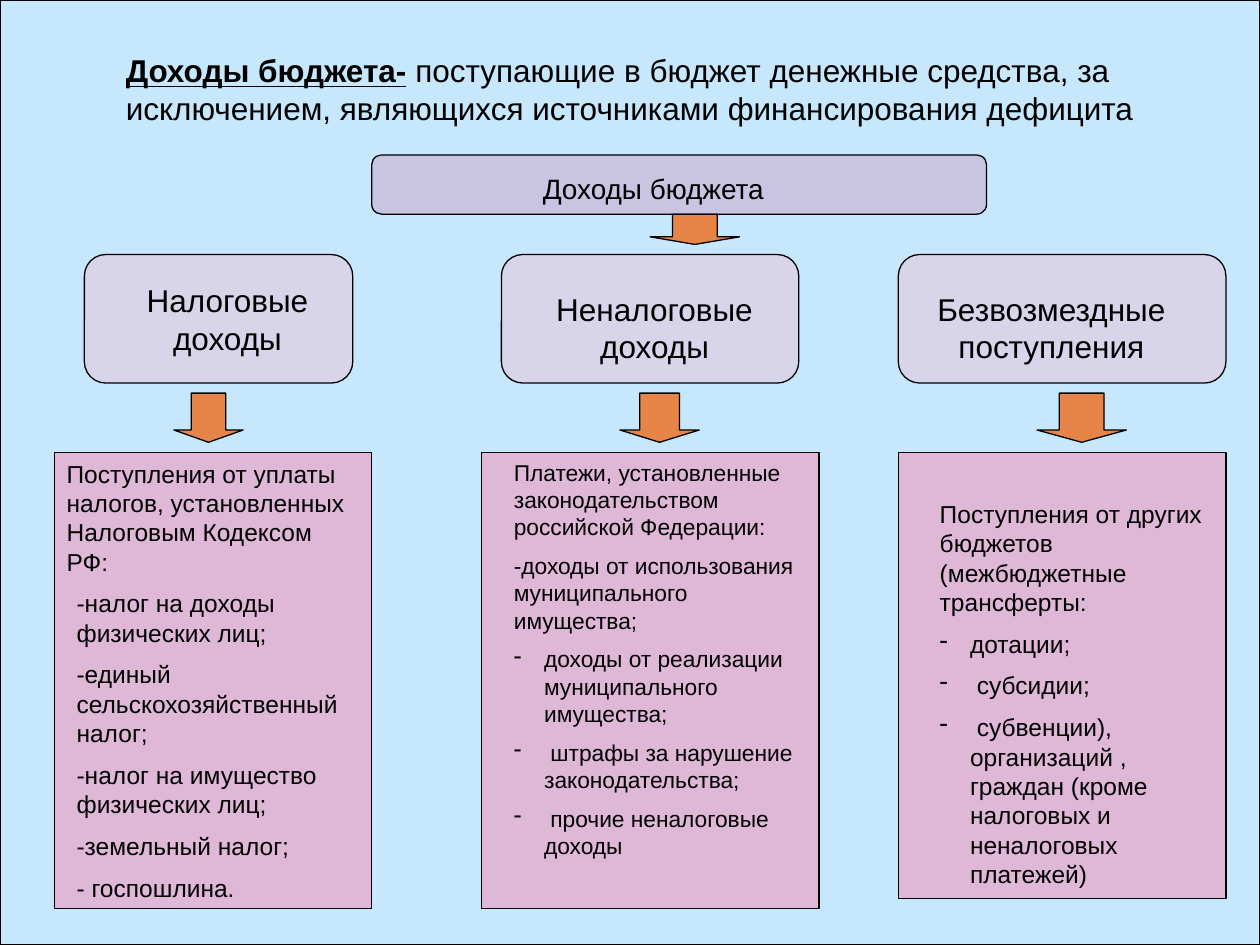
from lxml.etree import SubElement
from pptx import Presentation
from pptx.dml.color import RGBColor
from pptx.enum.shapes import MSO_SHAPE
from pptx.enum.text import MSO_ANCHOR, PP_ALIGN
from pptx.oxml.ns import qn
from pptx.util import Inches, Pt

COLORS = {
    "back": "C6E7FC",
    "ink": "000000",
    "root": "C8C4E2",
    "head": "D8D5EB",
    "body": "DFB7D7",
    "arrow": "E78447",
}
FONT = "Arial"
INDENT = Inches(0.24)


def dash(para):
    """Give the paragraph a hanging dash bullet."""
    props = para._p.get_or_add_pPr()
    props.set("marL", str(INDENT))
    props.set("indent", str(-INDENT))
    SubElement(props, qn("a:buChar")).set("char", "-")


def write(shape, paras, size=14, align=PP_ALIGN.LEFT, bullets=0, lead=None):
    """Fill the shape; the last `bullets` paragraphs get dashes, `lead` opens the text in bold."""
    frame = shape.text_frame
    frame.word_wrap = True
    frame.vertical_anchor = MSO_ANCHOR.TOP
    for num, text in enumerate(paras):
        para = frame.add_paragraph() if num else frame.paragraphs[0]
        para.alignment = align
        if num:
            para.space_before = Pt(size / 2)
        if num >= len(paras) - bullets:
            dash(para)
        parts = [(text, False)]
        if lead and not num:
            parts.insert(0, (lead, True))
        for words, strong in parts:
            run = para.add_run()
            run.text = words
            font = run.font
            font.name = FONT
            font.size = Pt(size)
            font.bold = font.underline = strong
            font.color.rgb = RGBColor.from_string(COLORS["ink"])


class Board:
    """Holds the current slide and the shared look of its shapes."""

    def __init__(self, slide):
        self.slide = slide
        fill = slide.background.fill
        fill.solid()
        fill.fore_color.rgb = RGBColor.from_string(COLORS["back"])

    def shape(self, kind, color, box, line=True):
        item = self.slide.shapes.add_shape(kind, *map(Inches, box))
        item.shadow.inherit = False
        item.fill.solid()
        item.fill.fore_color.rgb = RGBColor.from_string(COLORS[color])
        if line:
            item.line.color.rgb = RGBColor.from_string(COLORS["ink"])
            item.line.width = Pt(0.75)
        else:
            item.line.fill.background()
        return item

    def rect(self, color, box, line=True):
        return self.shape(MSO_SHAPE.RECTANGLE, color, box, line)

    def round(self, color, box):
        return self.shape(MSO_SHAPE.ROUNDED_RECTANGLE, color, box)

    def arrow(self, box):
        item = self.shape(MSO_SHAPE.DOWN_ARROW, "arrow", box)
        item.adjustments[0] = 0.5
        item.adjustments[1] = 0.25

    def text(self, box, paras, **style):
        write(self.slide.shapes.add_textbox(*map(Inches, box)), paras, **style)


def main():
    deck = Presentation()
    deck.slide_width, deck.slide_height = Inches(10), Inches(7.5)
    board = Board(deck.slides.add_slide(deck.slide_layouts[6]))
    board.rect("back", (0, 0, 10, 7.5))

    # body (left, width, height), head (left, width), arrow (left, width)
    columns = [
        ((0.43, 2.52, 3.62), (0.67, 2.13), (1.38, 0.55)),
        ((3.82, 2.68, 3.62), (3.98, 2.36), (4.92, 0.63)),
        ((7.13, 2.6, 3.54), (7.13, 2.6), (8.23, 0.71)),
    ]
    for (left, width, height), head, arrow in columns:
        board.rect("body", (left, 3.59, width, height))
        board.round("head", (head[0], 2.02, head[1], 1.02))
        board.arrow((arrow[0], 3.12, arrow[1], 0.39))

    board.text(
        (0.9, 0.36, 8.43, 0.7),
        [" поступающие в бюджет денежные средства, за исключением, "
         "являющихся источниками финансирования дефицита"],
        size=18, lead="Доходы бюджета-",
    )
    board.shape(MSO_SHAPE.FLOWCHART_ALTERNATE_PROCESS, "root", (2.95, 1.23, 4.88, 0.47))
    board.text((4.21, 1.31, 2.13, 0.37), ["Доходы бюджета"], size=16)
    board.arrow((5.16, 1.7, 0.71, 0.24))

    title = {"size": 18, "align": PP_ALIGN.CENTER}
    board.text((0.9, 2.18, 1.81, 0.7), ["Налоговые доходы"], **title)
    label = board.rect("head", (4.13, 2.25, 2.13, 0.7), line=False)
    write(label, ["Неналоговые доходы"], **title)
    board.text((7.28, 2.25, 2.13, 0.7), ["Безвозмездные поступления"], **title)

    board.text(
        (0.43, 3.59, 2.52, 1.03),
        ["Поступления от уплаты налогов, установленных Налоговым Кодексом РФ:"],
    )
    board.text((0.51, 4.62, 2.36, 2.66), [
        "-налог на доходы физических лиц;",
        "-единый сельскохозяйственный налог;",
        "-налог на имущество физических лиц;",
        "-земельный налог;",
        "- госпошлина.",
    ])
    board.text((3.98, 3.59, 2.52, 3.36), [
        "Платежи, установленные законодательством российской Федерации:",
        "-доходы от использования муниципального имущества;",
        "доходы от реализации муниципального имущества;",
        " штрафы за нарушение законодательства;",
        " прочие неналоговые доходы",
    ], size=13, bullets=3)
    board.text((7.36, 3.91, 2.28, 3.01), [
        "Поступления от других бюджетов (межбюджетные трансферты:",
        "дотации;",
        " субсидии;",
        " субвенции), организаций , граждан (кроме налоговых и неналоговых платежей)",
    ], bullets=3)

    deck.save("out.pptx")


if __name__ == "__main__":
    main()
